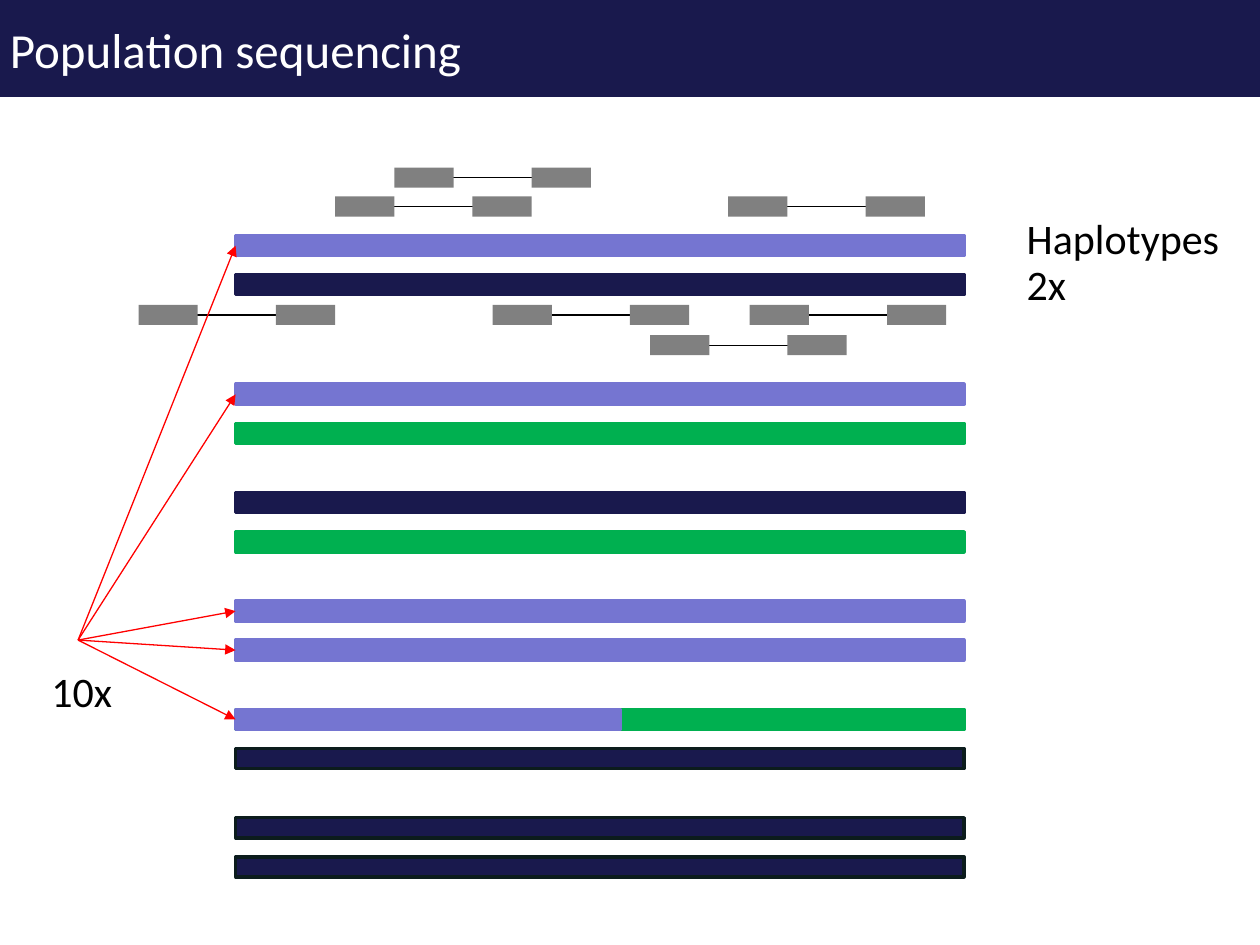
import pptx
import pptx.util
import pptx.dml.color
import pptx.enum.shapes
import pptx.enum.text
import pptx.oxml
import pptx.oxml.ns
from pptx.util import Inches

RGBColor = pptx.dml.color.RGBColor
NAVY = RGBColor(0x19, 0x19, 0x4D)
VIOLET = RGBColor(0x75, 0x75, 0xD1)
GREEN = RGBColor(0x00, 0xB0, 0x50)
DARK = RGBColor(0x0C, 0x1C, 0x1D)
GRAY = RGBColor(0x80, 0x80, 0x80)
RED = RGBColor(0xFF, 0x00, 0x00)
BLACK = RGBColor(0x00, 0x00, 0x00)
WHITE = RGBColor(0xFF, 0xFF, 0xFF)

presentation = pptx.Presentation()
presentation.slide_width = Inches(10)
presentation.slide_height = Inches(7.5)
slide = presentation.slides.add_slide(presentation.slide_layouts[6])


def add_bar(left, top, width, height, fill, outline=None):
    shape = slide.shapes.add_shape(
        pptx.enum.shapes.MSO_SHAPE.RECTANGLE,
        Inches(left), Inches(top), Inches(width), Inches(height))
    shape.shadow.inherit = False
    shape.fill.solid()
    shape.fill.fore_color.rgb = fill
    if outline is None:
        shape.line.fill.background()
    else:
        shape.line.color.rgb = outline
        shape.line.width = pptx.util.Pt(2)
    return shape


def add_line(start_x, start_y, end_x, end_y, color):
    connector = slide.shapes.add_connector(
        pptx.enum.shapes.MSO_CONNECTOR.STRAIGHT,
        Inches(start_x), Inches(start_y), Inches(end_x), Inches(end_y))
    connector.line.color.rgb = color
    connector.line.width = pptx.util.Pt(0.75)
    properties = connector._element.spPr
    properties.append(pptx.oxml.parse_xml(
        f'<a:effectLst {pptx.oxml.ns.nsdecls("a")}/>'))
    return connector


# Paired-end reads: two boxes joined by a line
READ_WIDTH, READ_STEP, BAR_HEIGHT = 0.47, 1.09, 0.16
reads = [(2.66, 1.56), (3.13, 1.33), (3.91, 2.42), (1.1, 2.42),
         (5.78, 1.56), (5.95, 2.42), (5.16, 2.66)]
for left, top in reads:
    middle = top + BAR_HEIGHT / 2
    link = add_line(left + 0.31, middle, left + READ_STEP, middle, BLACK)
    right_box = add_bar(left + READ_STEP, top, READ_WIDTH, BAR_HEIGHT, GRAY)
    add_bar(left, top, READ_WIDTH, BAR_HEIGHT, GRAY)
    link.end_connect(right_box, 1)

# Haplotype bars, two for each individual
BAR_LEFT, BAR_WIDTH, PAIR_GAP = 1.87, 5.78, 0.31
individuals = [
    (1.87, (VIOLET, VIOLET), (NAVY, NAVY)),
    (3.05, (VIOLET, VIOLET), (GREEN, GREEN)),
    (3.91, (NAVY, NAVY), (GREEN, GREEN)),
    (4.77, (VIOLET, VIOLET), (VIOLET, VIOLET)),
    (5.63, (GREEN, GREEN), (NAVY, DARK)),
    (6.49, (NAVY, DARK), (NAVY, DARK)),
]
violet_bars = []
for top, *haplotypes in individuals:
    for index, (fill, outline) in enumerate(haplotypes):
        bar = add_bar(BAR_LEFT, top + index * PAIR_GAP, BAR_WIDTH, BAR_HEIGHT,
                      fill, outline)
        if fill == VIOLET:
            violet_bars.append(bar)

# Violet part of the recombinant haplotype
violet_bars.append(add_bar(BAR_LEFT, 5.63, 3.05, BAR_HEIGHT, VIOLET, VIOLET))

# Arrows to every copy of the violet haplotype
for bar in violet_bars:
    arrow = add_line(0.62, 5.08, BAR_LEFT, 5.08, RED)
    arrow.end_connect(bar, 1)
    arrow.line._get_or_add_ln().append(pptx.oxml.parse_xml(
        f'<a:tailEnd {pptx.oxml.ns.nsdecls("a")} type="triangle"/>'))

# Title band
title = add_bar(-0.02, 0, 10.04, 0.77, NAVY)
title.text_frame.text = "Population sequencing"
title.text_frame.vertical_anchor = pptx.enum.text.MSO_ANCHOR.MIDDLE
labels = [(title, 28, WHITE)]

# Coverage labels
for text, left, top, width in [("Haplotypes", 8.05, 1.64, 1.75),
                               ("2x", 8.05, 2, 0.52),
                               ("10x", 0.31, 5.23, 0.69)]:
    box = slide.shapes.add_textbox(
        Inches(left), Inches(top), Inches(width), Inches(0.5))
    box.text_frame.text = text
    box.text_frame.word_wrap = False
    box.text_frame.auto_size = pptx.enum.text.MSO_AUTO_SIZE.SHAPE_TO_FIT_TEXT
    labels.append((box, 24, BLACK))

# Text formatting
for shape, size, color in labels:
    paragraph = shape.text_frame.paragraphs[0]
    paragraph.alignment = pptx.enum.text.PP_ALIGN.LEFT
    font = paragraph.runs[0].font
    font.name = "Calibri"
    font.size = pptx.util.Pt(size)
    font.color.rgb = color

presentation.save("out.pptx")
